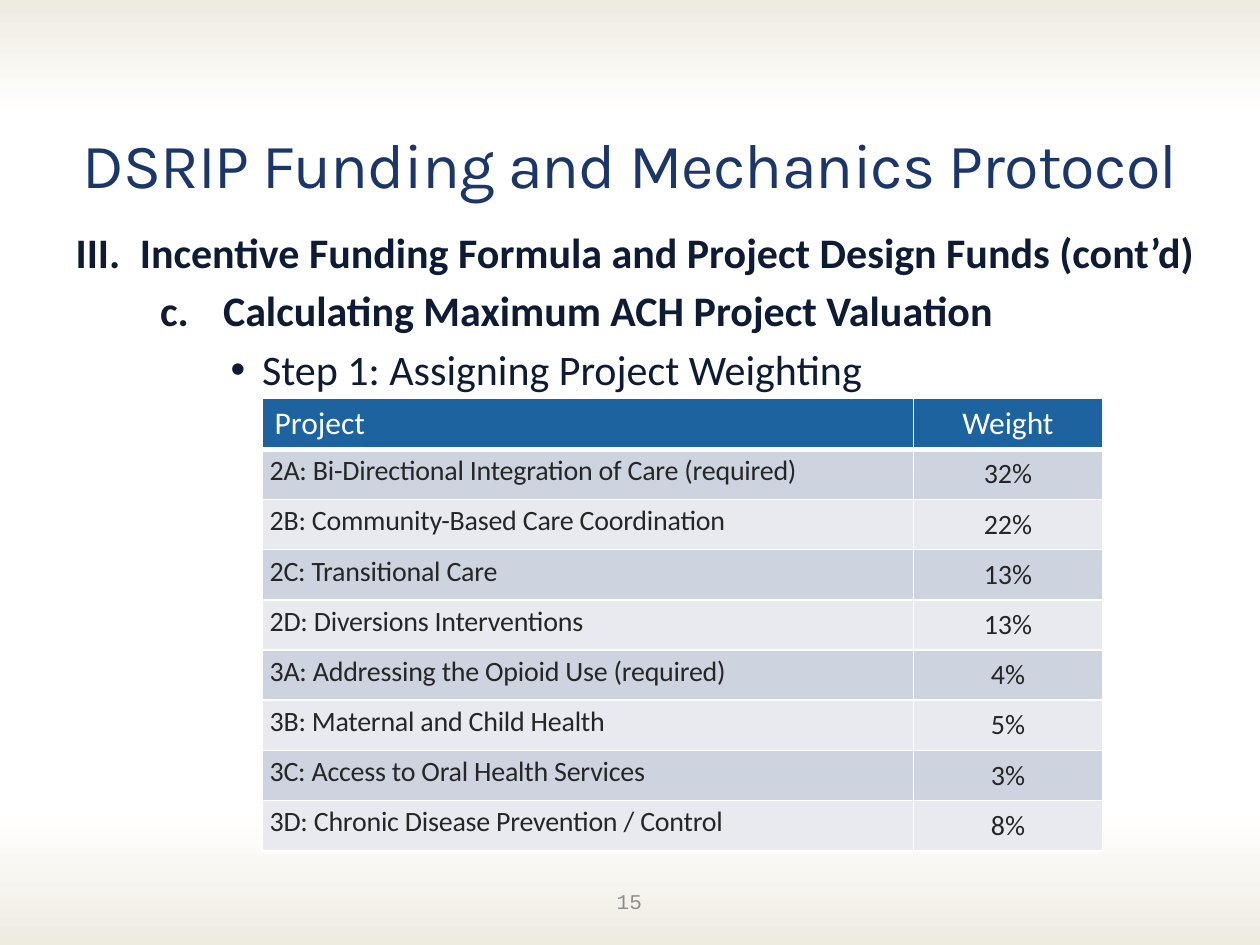
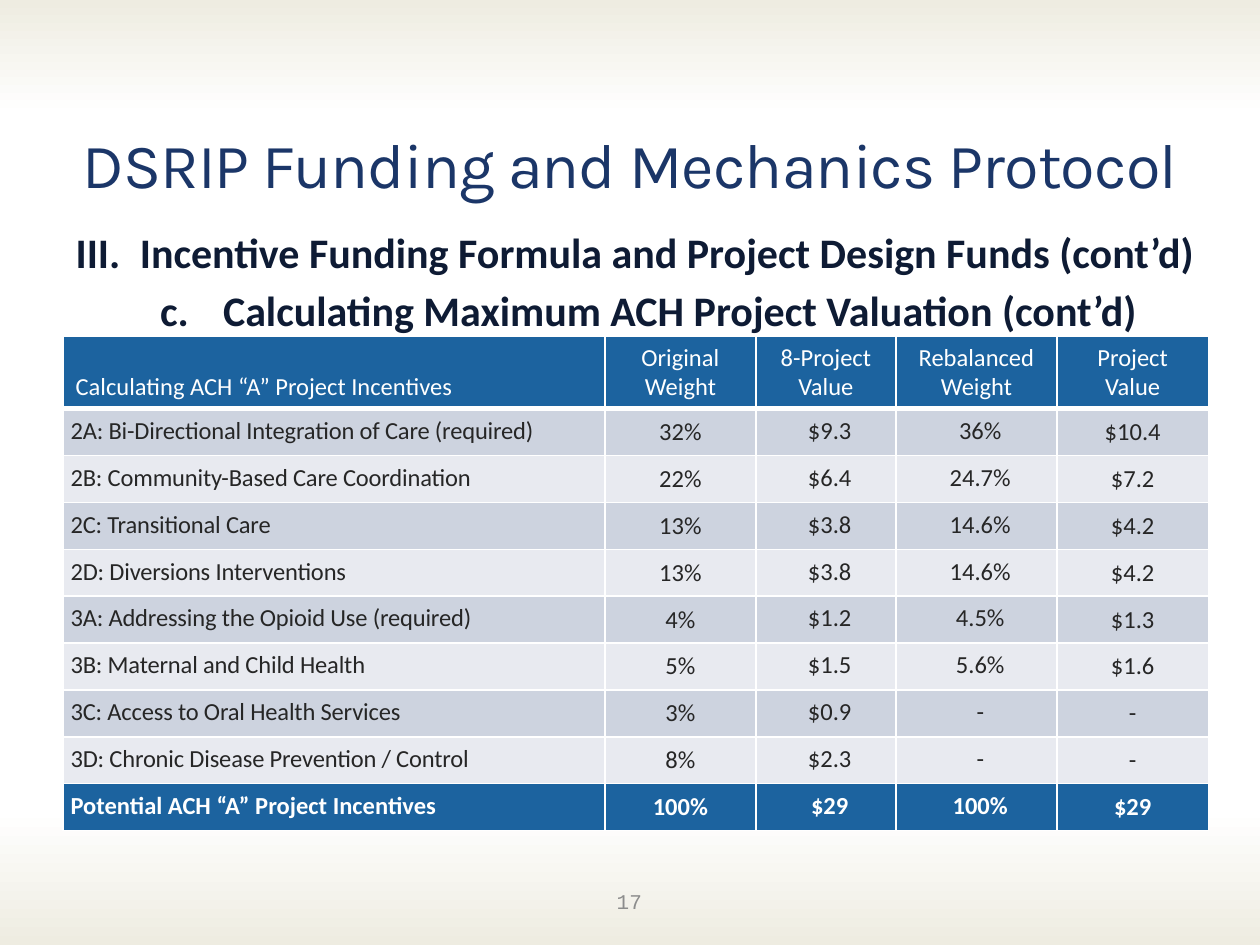
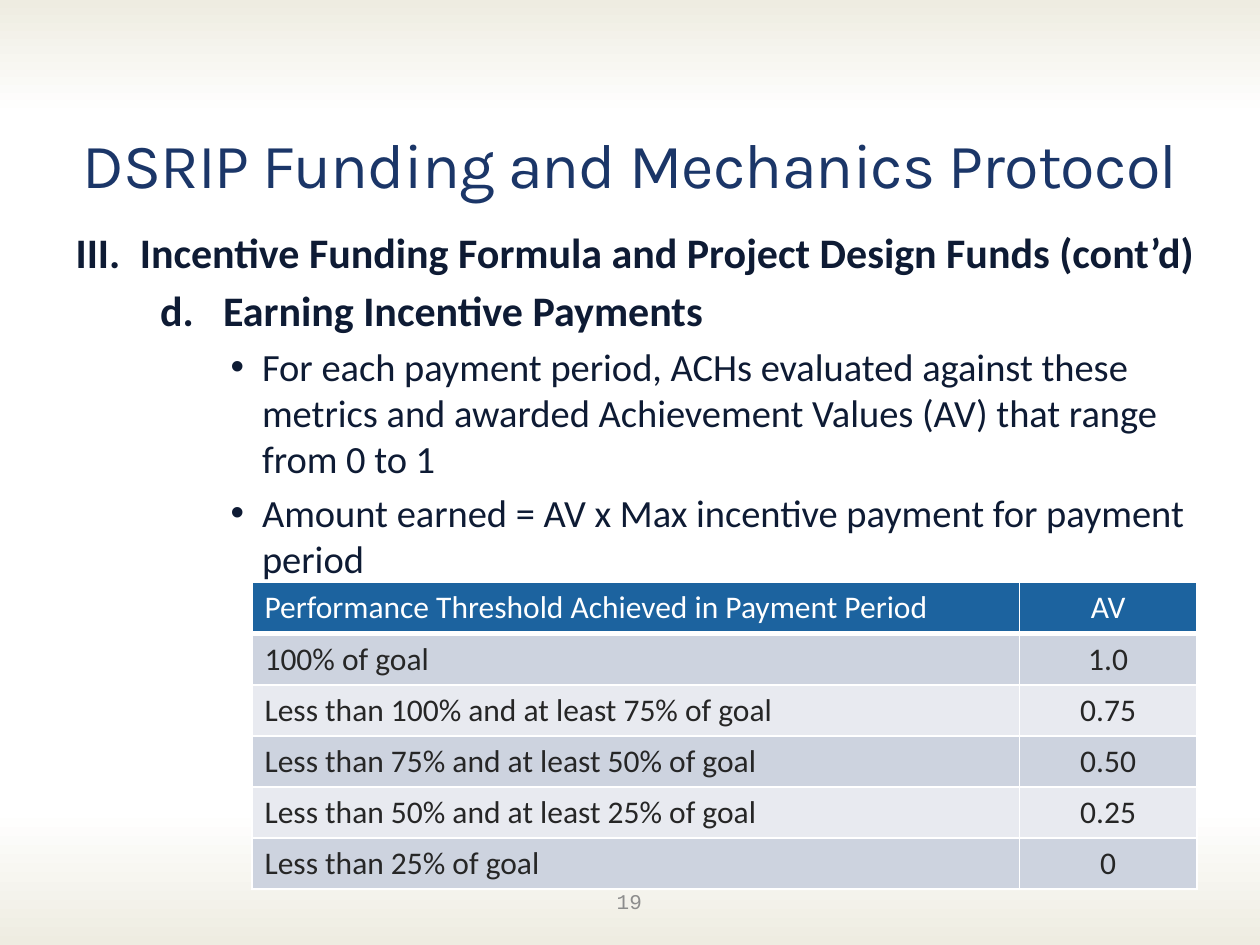
"""Build three slides on the DSRIP funding and mechanics protocol."""
from lxml import etree
from pptx import Presentation
from pptx.dml.color import RGBColor
from pptx.enum.shapes import MSO_SHAPE
from pptx.enum.text import MSO_ANCHOR, MSO_AUTO_SIZE, PP_ALIGN
from pptx.oxml.ns import qn
from pptx.util import Inches, Pt

RECT = MSO_SHAPE.RECTANGLE
TOP, MID, LOW = MSO_ANCHOR.TOP, MSO_ANCHOR.MIDDLE, MSO_ANCHOR.BOTTOM
LEFT, CENTER = PP_ALIGN.LEFT, PP_ALIGN.CENTER
FIXED = MSO_AUTO_SIZE.NONE

WHITE = RGBColor(0xFF, 0xFF, 0xFF)
SAND = RGBColor(0xEE, 0xEC, 0xE1)
NAVY = RGBColor(0x1B, 0x36, 0x68)
INK = RGBColor(0x0E, 0x1B, 0x34)
GRAY = RGBColor(0x8D, 0x8D, 0x8D)
DARK = RGBColor(0x26, 0x26, 0x26)
BLUE = RGBColor(0x1C, 0x63, 0x9F)
BANDS = [RGBColor(0xE8, 0xEA, 0xF0), RGBColor(0xCD, 0xD3, 0xDF)]

TITLE = {"name": "Karla", "size": Pt(36), "color": NAVY}
HEAD = {"name": "Calibri", "size": Pt(24), "color": INK, "bold": True}
PAGE = {"name": "Courier New", "size": Pt(12), "color": GRAY}

TASKS = [
    "2A: Bi-Directional Integration of Care (required)",
    "2B: Community-Based Care Coordination",
    "2C: Transitional Care",
    "2D: Diversions Interventions",
    "3A: Addressing the Opioid Use (required)",
    "3B: Maternal and Child Health",
    "3C: Access to Oral Health Services",
    "3D: Chronic Disease Prevention / Control",
]
SHARES = ["32%", "22%", "13%", "13%", "4%", "5%", "3%", "8%"]
FULL = ["$9.3", "$6.4", "$3.8", "$3.8", "$1.2", "$1.5", "$0.9", "$2.3"]
SHIFTED = ["36%", "24.7%", "14.6%", "14.6%", "4.5%", "5.6%", "-", "-"]
VALUES = ["$10.4", "$7.2", "$4.2", "$4.2", "$1.3", "$1.6", "-", "-"]

SLIDES = [
    {
        "page": "15", "wide": 9.25, "start": 3, "size": 24,
        "topic": "Calculating Maximum ACH Project Valuation",
        "points": ["Step 1: Assigning Project Weighting"],
        "at": (2.08, 3.16, 6.67, 3.59), "cols": [5.17, 1.5], "top": 0.4,
        "sizes": (18, 16), "anchors": (TOP, MID), "tight": [0],
        "rows": [("Project", "Weight"), *zip(TASKS, SHARES)],
        "foot": False,
    },
    {
        "page": "17", "wide": 9.17, "start": 3, "size": 24,
        "topic": "Calculating Maximum ACH Project Valuation (cont’d)",
        "points": [],
        "at": (0.5, 2.67, 9.09, 3.92), "cols": [4.3, 1.2, 1.11, 1.28, 1.2], "top": 0.57,
        "sizes": (14, 14), "anchors": (LOW, MID), "tight": [0, 2, 3],
        "rows": [
            ("Calculating ACH “A” Project Incentives", "Original Weight",
             "8-Project Value", "Rebalanced Weight", "Project Value"),
            *zip(TASKS, SHARES, FULL, SHIFTED, VALUES),
            ("Potential ACH “A” Project Incentives", "100%", "$29", "100%", "$29"),
        ],
        "foot": True,
    },
    {
        "page": "19", "wide": 9.17, "start": 4, "size": 22,
        "topic": "Earning Incentive Payments",
        "points": [
            "For each payment period, ACHs evaluated against these metrics and "
            "awarded Achievement Values (AV) that range from 0 to 1",
            "Amount earned = AV x Max incentive payment for payment period",
        ],
        "at": (2, 4.62, 7.5, 2.43), "cols": [6.09, 1.41], "top": 0.41,
        "sizes": (18, 18), "anchors": (TOP, TOP), "tight": [],
        "rows": [
            ("Performance Threshold Achieved in Payment Period", "AV"),
            ("100% of goal", "1.0"),
            ("Less than 100% and at least 75% of goal", "0.75"),
            ("Less than 75% and at least 50% of goal", "0.50"),
            ("Less than 50% and at least 25% of goal", "0.25"),
            ("Less than 25% of goal", "0"),
        ],
        "foot": False,
    },
]


def write(para, text, look, pitch=0):
    """Add a run with the given font values and letter pitch."""
    run = para.add_run()
    run.text = text
    for key, value in look.items():
        if key == "color":
            run.font.color.rgb = value
        else:
            setattr(run.font, key, value)
    if pitch:
        run.font._element.set("spc", str(pitch))


def mark(para, left, hang, tag=None, **attrs):
    """Set the indents of a paragraph and its bullet element."""
    props = para._p.get_or_add_pPr()
    props.set("marL", str(Inches(left)))
    props.set("indent", str(Inches(hang)))
    if tag:
        etree.SubElement(props, qn(tag), **attrs)


deck = Presentation()
deck.slide_width, deck.slide_height = Inches(10), Inches(7.5)
layout = deck.slide_layouts[3]

for num, item in enumerate(SLIDES):
    slide = deck.slides.add_slide(layout)
    if num == 0:
        for pos, (top, high, turn) in enumerate([(6.42, 1.08, 180), (0, 0.92, 0)]):
            band = slide.shapes.add_shape(RECT, 0, Inches(top), Inches(10), Inches(high))
            band.rotation = turn
            band.shadow.inherit = False
            band.line.fill.background()
            band.fill.gradient()
            band.fill.gradient_angle = 270
            for stop, tint in zip(band.fill.gradient_stops, (SAND, WHITE)):
                stop.color.rgb = tint
            band.element.nvSpPr.cNvPr.set("id", str(20 + pos))
            layout.shapes.element.insert(2 + pos, band.element)

    title, head, body = slide.placeholders
    page = slide.shapes.add_textbox(0, 0, 0, 0)
    for shape, box, anchor in [
        (title, (0.5, 0.67, 9, 1.25), MID),
        (head, (0.5, 1.75, item["wide"], 0.54), TOP),
        (body, (1.17, 2.21, 8.5, 3.33), TOP),
        (page, (3.83, 6.95, 2.33, 0.4), MID),
    ]:
        shape.left, shape.top, shape.width, shape.height = map(Inches, box)
        frame = shape.text_frame
        frame.word_wrap = True
        frame.auto_size = FIXED
        frame.vertical_anchor = anchor
        frame.paragraphs[0].space_before = Pt(0)

    para = title.text_frame.paragraphs[0]
    para.alignment = CENTER
    write(para, "DSRIP Funding and Mechanics Protocol", TITLE, -50)

    para = head.text_frame.paragraphs[0]
    mark(para, 0.51, -0.51, "a:buNone")
    write(para, "III. \tIncentive Funding Formula and Project Design Funds (cont’d)", HEAD)

    para = body.text_frame.paragraphs[0]
    mark(para, 0.5, -0.5, "a:buAutoNum", type="alphaLcPeriod", startAt=str(item["start"]))
    write(para, item["topic"], HEAD)
    for point in item["points"]:
        para = body.text_frame.add_paragraph()
        para.level = 2
        mark(para, 0.81, -0.25, "a:buChar", char="•")
        write(para, point, {**HEAD, "size": Pt(item["size"]), "bold": False})

    para = page.text_frame.paragraphs[0]
    para.alignment = CENTER
    write(para, item["page"], PAGE)

    rows, cols = item["rows"], item["cols"]
    table = slide.shapes.add_table(len(rows), len(cols), *map(Inches, item["at"])).table
    table.horz_banding = False
    for col, width in zip(table.columns, cols):
        col.width = Inches(width)
    step = (item["at"][3] - item["top"]) / (len(rows) - 1)
    for r, texts in enumerate(rows):
        table.rows[r].height = Inches(step if r else item["top"])
        foot = item["foot"] and r == len(rows) - 1
        solid = r == 0 or foot
        look = {
            "name": "Calibri", "size": Pt(item["sizes"][r > 0]),
            "color": WHITE if solid else DARK, "bold": foot,
        }
        for c, text in enumerate(texts):
            cell = table.cell(r, c)
            props = cell._tc.get_or_add_tcPr()
            for side in "LRTB":
                weight = 3 if r == 0 and side == "B" else 1
                line = etree.SubElement(props, qn("a:ln" + side), w=str(Pt(weight)))
                fill = etree.SubElement(line, qn("a:solidFill"))
                etree.SubElement(fill, qn("a:srgbClr"), val=str(WHITE))
            cell.fill.solid()
            cell.fill.fore_color.rgb = BLUE if solid else BANDS[r % 2]
            cell.vertical_anchor = item["anchors"][r > 0]
            para = cell.text_frame.paragraphs[0]
            para.alignment = CENTER if c else LEFT
            tight = r > 0 and c in item["tight"]
            if tight:
                for edge in ("left", "right", "top", "bottom"):
                    setattr(cell, "margin_" + edge, 0)
                mark(para, 0.06, 0)
                para.line_spacing = Pt(15.3 if r > 7 else 15.8)
            write(para, text, look, -10 if tight and c == 0 and not foot else 0)

deck.save("out.pptx")
